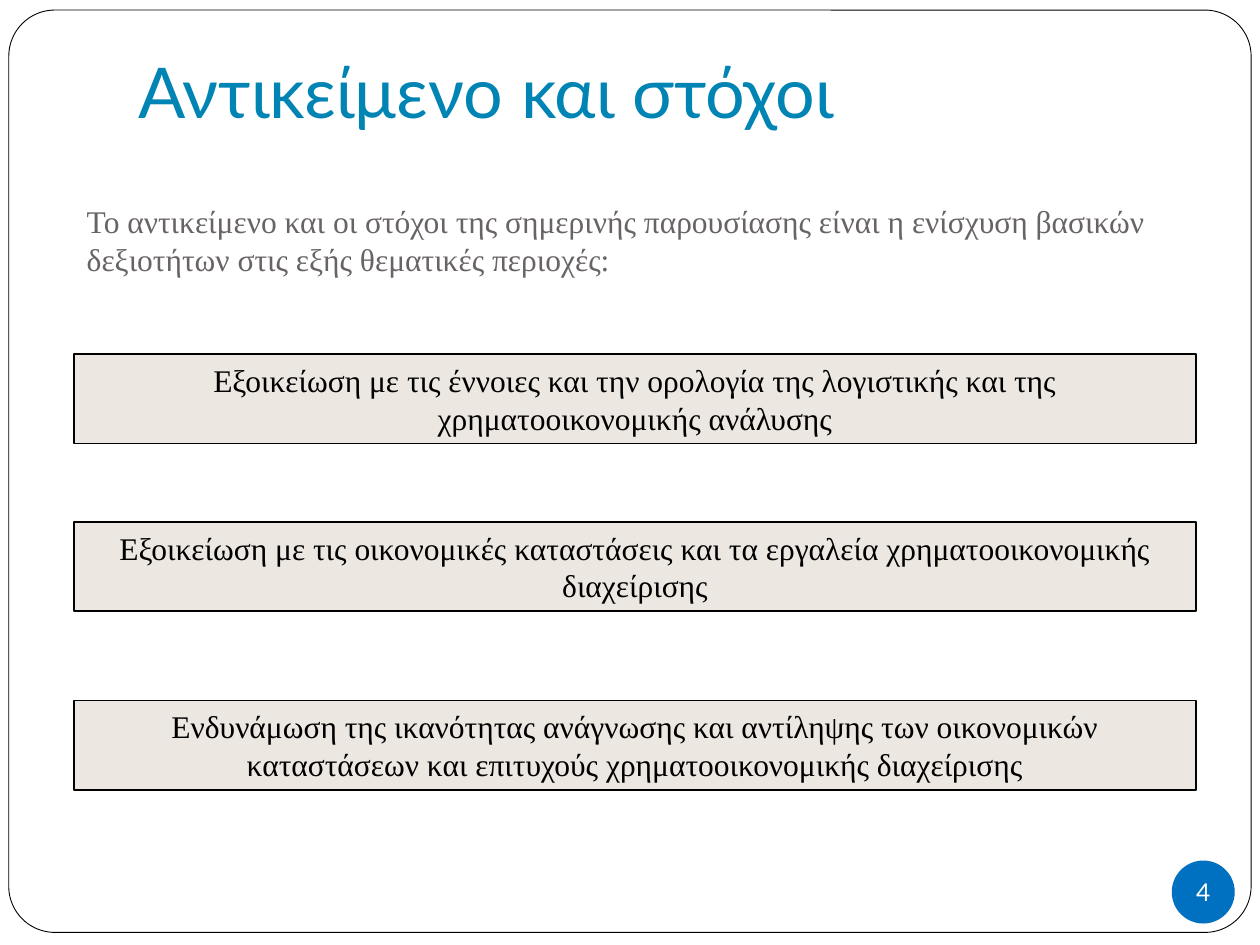
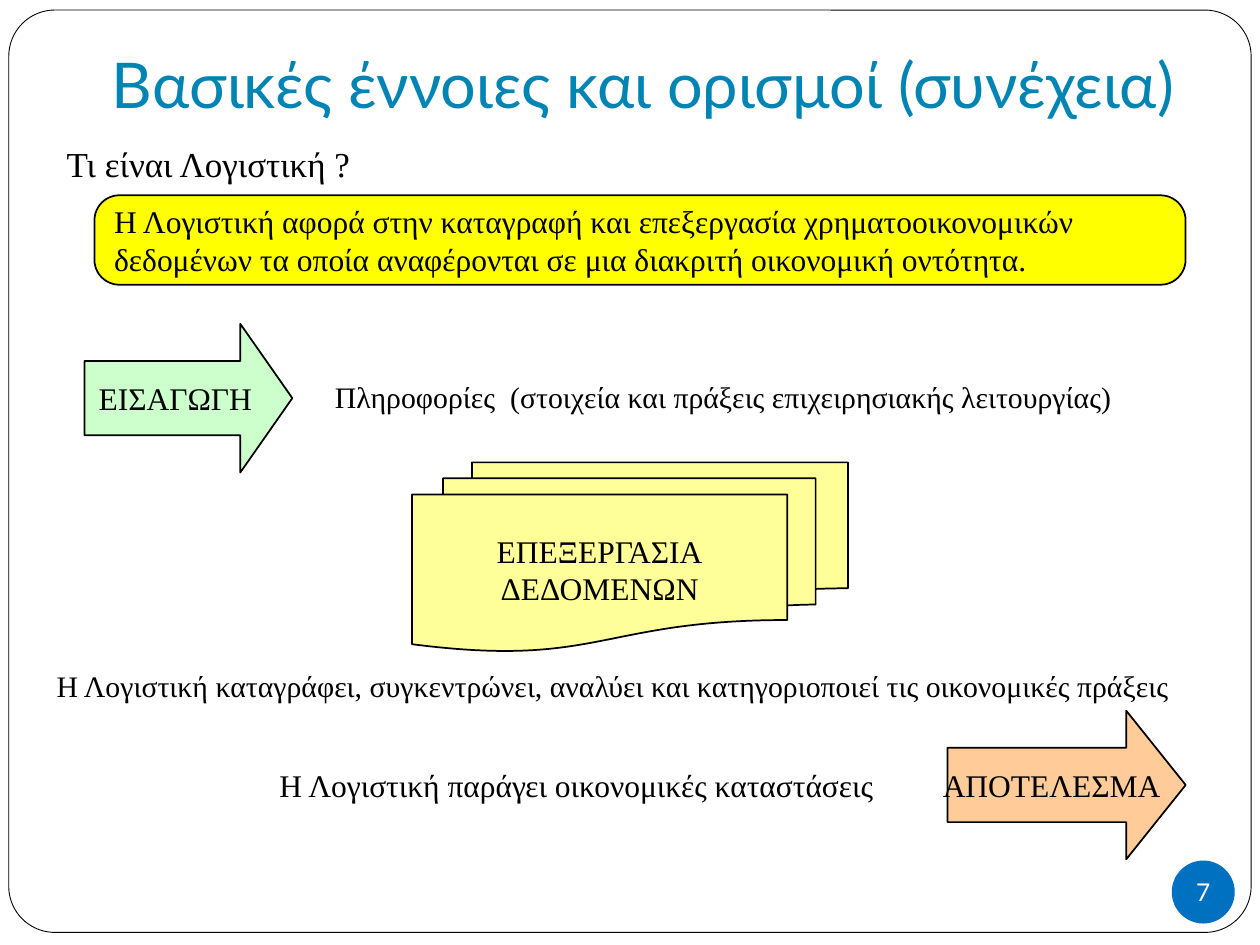
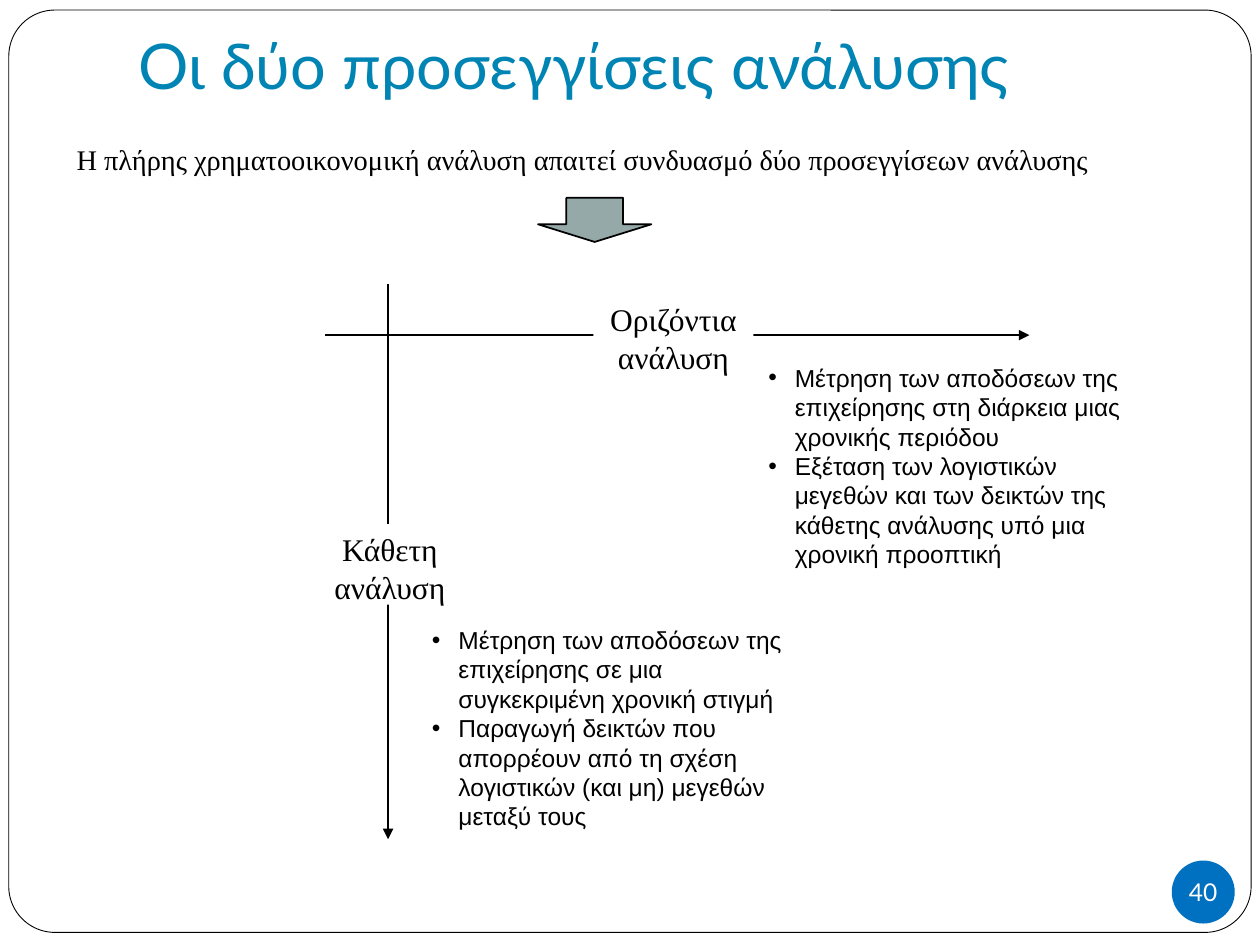
"""Build three Greek accounting slides on a grid of 100 columns by 75 rows."""
from lxml.etree import SubElement
from pptx import Presentation
from pptx.dml.color import RGBColor
from pptx.enum.shapes import MSO_CONNECTOR, MSO_SHAPE
from pptx.enum.text import MSO_ANCHOR, PP_ALIGN
from pptx.oxml.ns import qn
from pptx.util import Inches, Pt

COLORS = {
    "title": "0084B4", "badge": "0070C0", "white": "FFFFFF", "black": "000000",
    "intro": "696464", "goal": "ECE8E1", "definition": "FFFF00", "input": "CCFFCC",
    "process": "FFFF99", "result": "FFCC99", "pointer": "96A9A9",
}
COLS, ROWS = 100, 75
WIDTH, HEIGHT = Inches(10), Inches(7.5)
SERIF, SANS, HEAD = "Times New Roman", "Arial", "Lato"
BULLET_INDENT = Inches(0.21)


def rgb(name):
    """Return the named palette colour."""
    return RGBColor.from_string(COLORS[name])


def grid(col, row, cols, rows):
    """Turn grid units into slide lengths."""
    return (round(WIDTH * col / COLS), round(HEIGHT * row / ROWS),
            round(WIDTH * cols / COLS), round(HEIGHT * rows / ROWS))


def add_bullet(p):
    """Give a paragraph a hanging round bullet."""
    pPr = p._p.get_or_add_pPr()
    pPr.set("marL", str(BULLET_INDENT))
    pPr.set("indent", str(-BULLET_INDENT))
    SubElement(pPr, qn("a:buFont"), typeface=SANS)
    SubElement(pPr, qn("a:buChar"), char="•")


def write(sp, lines, size=18, font=SERIF, color="black", align=PP_ALIGN.LEFT,
          bullets=False, **frame):
    """Fill a shape with one paragraph per line."""
    tf = sp.text_frame
    settings = {"word_wrap": True, "vertical_anchor": MSO_ANCHOR.TOP} | frame
    for name, value in settings.items():
        setattr(tf, name, value)
    for i, line in enumerate(lines):
        p = tf.add_paragraph() if i else tf.paragraphs[0]
        p.alignment = align
        if bullets:
            add_bullet(p)
        r = p.add_run()
        r.text = line
        for name, value in {"size": Pt(size), "name": font}.items():
            setattr(r.font, name, value)
        r.font.color.rgb = rgb(color)


def add_text(s, box, *lines, **fmt):
    """Add a text box."""
    write(s.shapes.add_textbox(*grid(*box)), lines, **fmt)


def add_title(s, box, text, size=36):
    """Add the slide title, resting on the bottom of its box."""
    add_text(s, box, text, size=size, font=HEAD, color="title",
             vertical_anchor=MSO_ANCHOR.BOTTOM, margin_bottom=Inches(0.1))


def add_block(s, kind, box, fill, *lines, line=1, adj=(), **fmt):
    """Add a filled preset shape with optional outline and text."""
    sp = s.shapes.add_shape(kind, *grid(*box))
    sp.shadow.inherit = False
    sp.fill.solid()
    sp.fill.fore_color.rgb = rgb(fill)
    if line:
        sp.line.color.rgb = rgb("black")
        sp.line.width = Pt(line)
    else:
        sp.line.fill.background()
    for i, value in enumerate(adj):
        sp.adjustments[i] = value
    if lines:
        defaults = {"align": PP_ALIGN.CENTER, "vertical_anchor": MSO_ANCHOR.MIDDLE}
        write(sp, lines, **(defaults | fmt))


def add_axis(s, col, row, cols, rows):
    """Add a straight line ending in an arrowhead."""
    x, y, w, h = grid(col, row, cols, rows)
    cn = s.shapes.add_connector(MSO_CONNECTOR.STRAIGHT, x, y, x + w, y + h)
    cn.line.color.rgb = rgb("black")
    cn.line.width = Pt(1)
    SubElement(cn.line._get_or_add_ln(), qn("a:tailEnd"), type="triangle")
    SubElement(cn._element.spPr, qn("a:effectLst"))


def add_axis_label(s, box, *lines):
    """Add a white label that interrupts an axis."""
    add_block(s, MSO_SHAPE.RECTANGLE, box, "white", *lines, line=0,
              word_wrap=False, vertical_anchor=MSO_ANCHOR.TOP)


def add_page(prs, number):
    """Add a slide with the rounded frame and the page badge."""
    s = prs.slides.add_slide(prs.slide_layouts[6])
    add_block(s, MSO_SHAPE.ROUNDED_RECTANGLE, (0.7, 0.8, 98.6, 73.2), "white",
              line=0.5, adj=[0.05])
    add_block(s, MSO_SHAPE.OVAL, (93, 68.3, 5, 5), "badge", str(number), line=0,
              size=14, font=HEAD, color="white", word_wrap=False, margin_left=0,
              margin_right=0, margin_top=0, margin_bottom=0)
    return s


def build_goals(prs):
    """Build the slide of aims."""
    s = add_page(prs, 4)
    add_title(s, (10, 3, 85, 8.5), "Αντικείμενο και στόχοι", size=40)
    add_text(s, (5.9, 14.7, 89, 8.7),
             "Το αντικείμενο και οι στόχοι της σημερινής παρουσίασης είναι η ενίσχυση "
             "βασικών δεξιοτήτων στις εξής θεματικές περιοχές:",
             color="intro", vertical_anchor=MSO_ANCHOR.MIDDLE)
    goals = [
        (28.1, "Εξοικείωση με τις έννοιες και την ορολογία της λογιστικής και της "
               "χρηματοοικονομικής ανάλυσης"),
        (41.4, "Εξοικείωση με τις οικονομικές καταστάσεις και τα εργαλεία "
               "χρηματοοικονομικής διαχείρισης"),
        (55.6, "Ενδυνάμωση της ικανότητας ανάγνωσης και αντίληψης των οικονομικών "
               "καταστάσεων και επιτυχούς χρηματοοικονομικής διαχείρισης"),
    ]
    for row, goal in goals:
        add_block(s, MSO_SHAPE.RECTANGLE, (5.9, row, 89, 7.1), "goal", goal)


def build_definition(prs):
    """Build the slide that defines accounting."""
    s = add_page(prs, 7)
    add_title(s, (7.9, 4.4, 86.7, 6.2), "Βασικές έννοιες και ορισμοί (συνέχεια)")
    add_text(s, (4.3, 10.8, 85, 4.6), "Τι είναι Λογιστική ?", size=20)
    add_block(s, MSO_SHAPE.ROUNDED_RECTANGLE, (7.5, 15.5, 86.6, 7.1), "definition",
              "Η Λογιστική αφορά στην καταγραφή και επεξεργασία χρηματοοικονομικών "
              "δεδομένων τα οποία αναφέρονται σε μια διακριτή οικονομική οντότητα.",
              adj=[0.28], align=PP_ALIGN.LEFT)
    add_block(s, MSO_SHAPE.RIGHT_ARROW, (6.7, 25.7, 16.5, 11.8), "input", "ΕΙΣΑΓΩΓΗ",
              adj=[0.5, 0.35], word_wrap=False)
    add_text(s, (25.6, 29.6, 68.5, 4.7),
             "Πληροφορίες  (στοιχεία και πράξεις επιχειρησιακής λειτουργίας)", size=17)
    add_block(s, MSO_SHAPE.FLOWCHART_MULTIDOCUMENT, (32.7, 36.7, 34.6, 15), "process",
              "ΕΠΕΞΕΡΓΑΣΙΑ", "ΔΕΔΟΜΕΝΩΝ", word_wrap=False)
    add_text(s, (3.5, 52.5, 96.1, 3.9),
             "Η Λογιστική καταγράφει, συγκεντρώνει, αναλύει και κατηγοριοποιεί τις "
             "οικονομικές πράξεις", size=17)
    add_block(s, MSO_SHAPE.RIGHT_ARROW, (75.2, 56.4, 18.9, 11.8), "result",
              "ΑΠΟΤΕΛΕΣΜΑ", adj=[0.5, 0.4], word_wrap=False)
    add_text(s, (21.2, 60.3, 51.6, 5.5), "Η Λογιστική παράγει οικονομικές καταστάσεις")


def build_approaches(prs):
    """Build the slide of horizontal and vertical analysis."""
    s = add_page(prs, 40)
    add_title(s, (10, 3, 85, 6.1), "Οι δύο προσεγγίσεις ανάλυσης")
    add_text(s, (5.1, 10.8, 90.6, 5),
             "Η πλήρης χρηματοοικονομική ανάλυση απαιτεί συνδυασμό δύο προσεγγίσεων "
             "ανάλυσης", size=16.2)
    add_block(s, MSO_SHAPE.DOWN_ARROW, (42.7, 15.7, 9, 3.5), "pointer", adj=[0.5, 0.4])
    add_axis(s, 30.8, 22.5, 0, 44.1)
    add_axis_label(s, (25.2, 41.6, 11.5, 6.4), "Κάθετη", "ανάλυση")
    add_text(s, (33.3, 49.1, 30.1, 19.9),
             "Μέτρηση των αποδόσεων της επιχείρησης σε μια συγκεκριμένη χρονική στιγμή",
             "Παραγωγή δεικτών που απορρέουν από τη σχέση λογιστικών (και μη) μεγεθών "
             "μεταξύ τους", size=14, font=SANS, bullets=True)
    add_axis(s, 25.8, 26.6, 55.9, 0)
    add_axis_label(s, (47.1, 23.3, 12.7, 6.4), "Οριζόντια", "ανάλυση")
    add_text(s, (60, 28.3, 31.7, 17.5),
             "Μέτρηση των αποδόσεων της επιχείρησης στη διάρκεια μιας χρονικής περιόδου",
             "Εξέταση των λογιστικών μεγεθών και των δεικτών της κάθετης ανάλυσης υπό "
             "μια χρονική προοπτική", size=14, font=SANS, bullets=True)


def main():
    """Build and save the presentation."""
    prs = Presentation()
    prs.slide_width, prs.slide_height = WIDTH, HEIGHT
    build_goals(prs)
    build_definition(prs)
    build_approaches(prs)
    prs.save("out.pptx")


if __name__ == "__main__":
    main()
